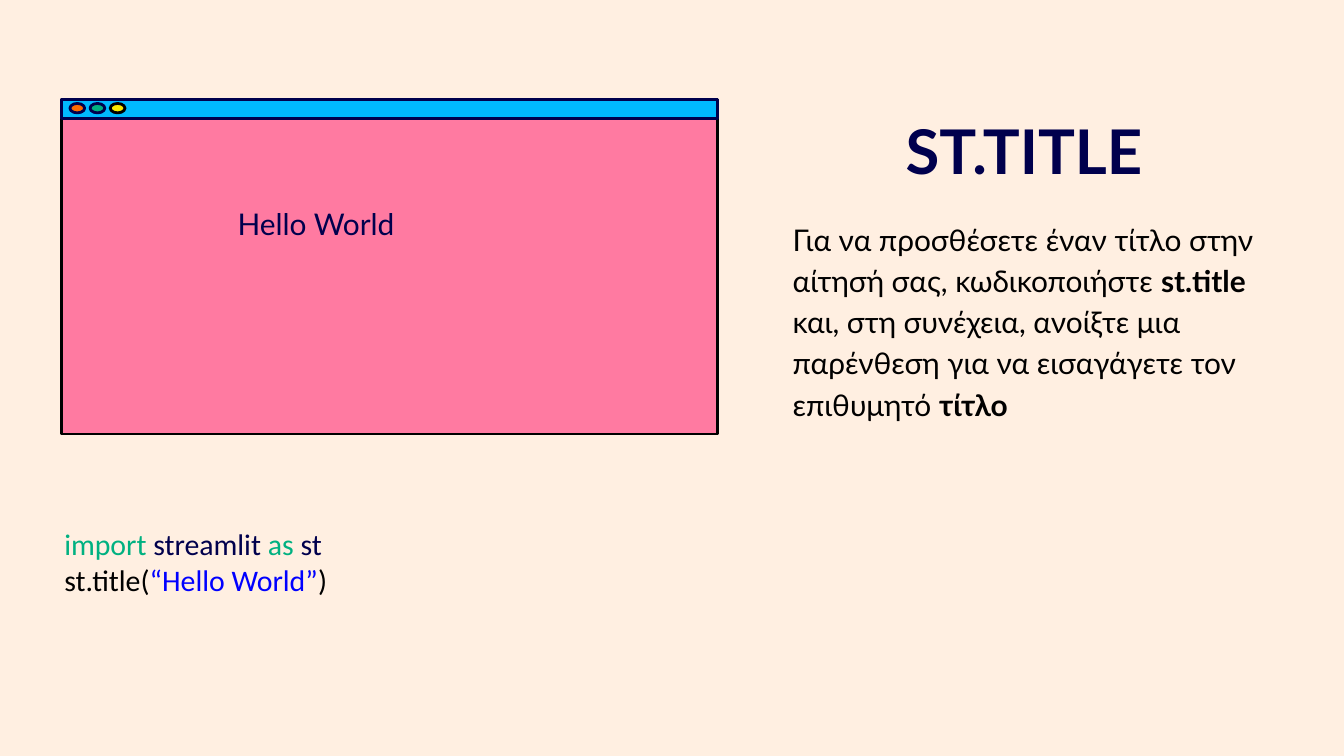
import pptx
import pptx.util
import pptx.dml.color
import pptx.enum.shapes
import pptx.enum.text

Inches = pptx.util.Inches
Shapes = pptx.enum.shapes.MSO_SHAPE
Align = pptx.enum.text.PP_ALIGN

COLORS = {
    "cream": "FFEFE1", "pink": "FF7AA1", "sky": "00B9FF", "navy": "00004D",
    "black": "000000", "green": "00B181", "yellow": "FAEA00",
    "orange": "FF6A00", "blue": "0000FF",
}

PAGE_WIDTH = 10
PAGE_HEIGHT = PAGE_WIDTH * 9 / 16

WINDOW = {"left": 0.46, "top": 0.74, "width": 4.88, "height": 2.49, "bar": 0.14}
BUTTONS = [("orange", "navy"), ("green", "navy"), ("yellow", "black")]
BUTTON = {"left": 0.52, "top": 0.77, "width": 0.11, "height": 0.07, "step": 0.15}

TEXTS = [
    {
        "at": (5.8, 0.74, 3.64, 0.57), "font": "Lato", "size": 33,
        "format": {"alignment": Align.CENTER},
        "lines": [[("ST.TITLE", "navy", True)]],
    },
    {
        "at": (5.8, 1.51, 3.97, 2.44), "font": "Lato", "size": 16,
        "format": {"line_spacing": 1.15, "space_before": pptx.util.Pt(12),
                   "space_after": pptx.util.Pt(12)},
        "lines": [[
            ("Για να προσθέσετε έναν τίτλο στην αίτησή σας, κωδικοποιήστε ", "black", False),
            ("st.title", "black", True),
            (" και, στη συνέχεια, ανοίξτε μια παρένθεση για να εισαγάγετε τον επιθυμητό ",
             "black", False),
            ("τίτλο", "black", True),
        ]],
    },
    {
        "at": (0.38, 3.81, 3.35, 0.98), "font": "Calibri", "size": 16, "format": {},
        "lines": [
            [("import ", "green", False), ("streamlit ", "navy", False),
             ("as ", "green", False), ("st", "navy", False)],
            [("st.title(", "black", False), ("“Hello World”", "blue", False),
             (")", "black", False)],
        ],
    },
    {
        "at": (1.67, 1.43, 3.35, 0.47), "font": "Lato", "size": 16, "format": {},
        "lines": [[("Hello World", "navy", False)]],
    },
]


def color(name):
    return pptx.dml.color.RGBColor.from_string(COLORS[name])


def apply(target, values):
    for name, value in values.items():
        setattr(target, name, value)


def add_outlined(shapes, kind, at, fill, line):
    shape = shapes.add_shape(kind, *map(Inches, at))
    shape.shadow.inherit = False
    shape.fill.solid()
    shape.fill.fore_color.rgb = color(fill)
    shape.line.color.rgb = color(line)
    shape.line.width = pptx.util.Pt(1.5)


def add_window(page):
    shapes = page.shapes.add_group_shape().shapes
    left, top, width = (WINDOW[key] for key in ("left", "top", "width"))
    add_outlined(shapes, Shapes.RECTANGLE, (left, top, width, WINDOW["height"]), "pink", "black")
    add_outlined(shapes, Shapes.RECTANGLE, (left, top, width, WINDOW["bar"]), "sky", "navy")
    for index, (fill, line) in enumerate(BUTTONS):
        at = (BUTTON["left"] + index * BUTTON["step"], BUTTON["top"],
              BUTTON["width"], BUTTON["height"])
        add_outlined(shapes, Shapes.OVAL, at, fill, line)


def add_text(page, text):
    frame = page.shapes.add_textbox(*map(Inches, text["at"])).text_frame
    margins = {f"margin_{side}": Inches(0.1) for side in ("left", "top", "right", "bottom")}
    apply(frame, {"word_wrap": True, **margins})
    for index, line in enumerate(text["lines"]):
        para = frame.add_paragraph() if index else frame.paragraphs[0]
        apply(para, text["format"])
        for words, shade, bold in line:
            span = para.add_run()
            span.text = words
            apply(span.font, {"name": text["font"], "size": pptx.util.Pt(text["size"]),
                              "bold": bold})
            span.font.color.rgb = color(shade)


def main():
    deck = pptx.Presentation()
    apply(deck, {"slide_width": Inches(PAGE_WIDTH), "slide_height": Inches(PAGE_HEIGHT)})
    page = deck.slides.add_slide(deck.slide_layouts[6])
    page.background.fill.solid()
    page.background.fill.fore_color.rgb = color("cream")
    add_window(page)
    for text in TEXTS:
        add_text(page, text)
    deck.save("out.pptx")


if __name__ == "__main__":
    main()
